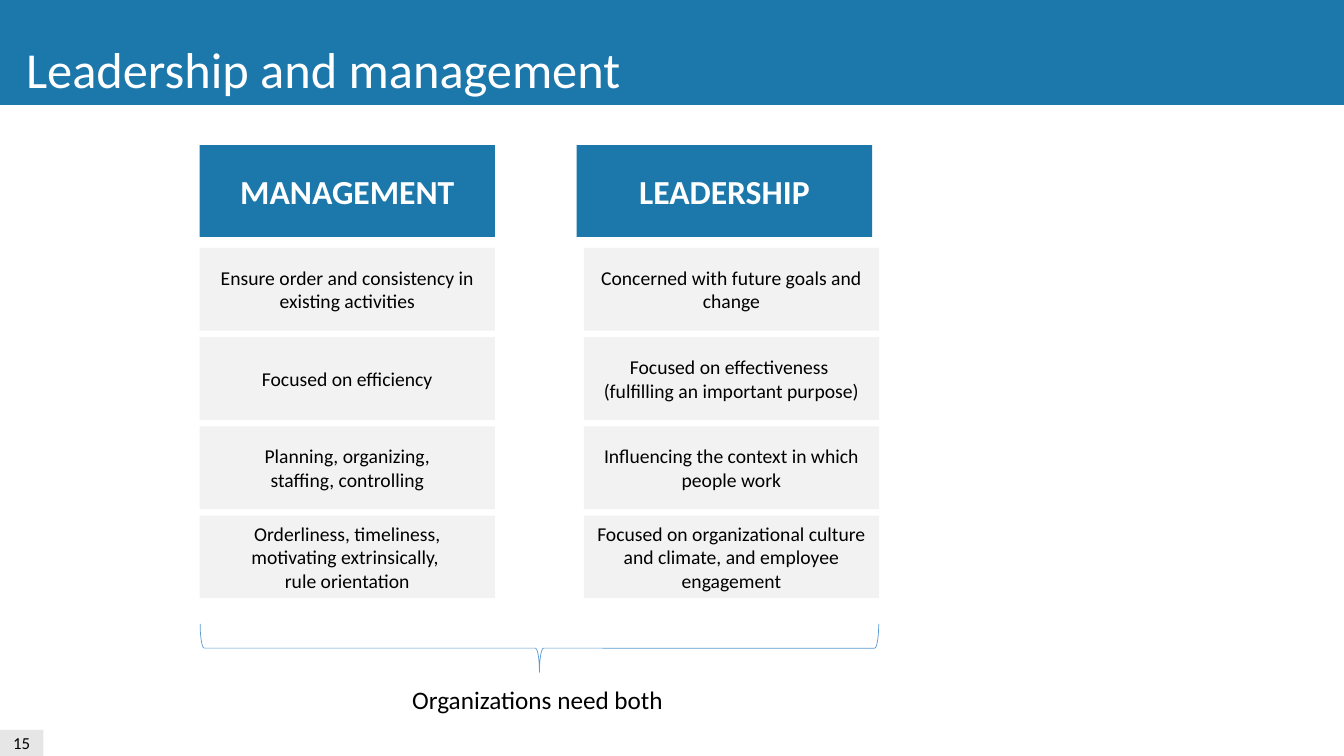
"""Build a slide that compares management with leadership."""
from pptx import Presentation
from pptx.dml.color import RGBColor
from pptx.enum.shapes import MSO_SHAPE
from pptx.enum.text import MSO_ANCHOR, MSO_AUTO_SIZE, PP_ALIGN
from pptx.util import Inches, Pt

THEME = {
    "font": "Calibri",
    "blue": RGBColor.from_string("1C78AB"),
    "brace": RGBColor.from_string("5B9BD5"),
    "panel": RGBColor.from_string("F2F2F2"),
    "footer": RGBColor.from_string("E7E6E6"),
    "white": RGBColor.from_string("FFFFFF"),
    "black": RGBColor.from_string("000000"),
    "title": 36,
    "heading": 24,
    "summary": 18,
    "body": 14,
    "number": 12,
}

COLUMNS = [
    ("MANAGEMENT", 1.98, 1.98, [
        "Ensure order and consistency in existing activities",
        "Focused on efficiency",
        "Planning, organizing,\nstaffing, controlling",
        "Orderliness, timeliness, motivating extrinsically, \vrule orientation",
    ]),
    ("LEADERSHIP", 5.72, 5.79, [
        "Concerned with future goals and change",
        "Focused on effectiveness \v(fulfilling an important purpose)",
        "Influencing the context in which people work",
        "Focused on organizational culture and climate, and employee engagement",
    ]),
]
CARD_WIDTH, CARD_HEIGHT = 2.93, 0.82
HEADING_TOP, HEADING_HEIGHT = 1.44, 0.91
FIRST_ROW, ROW_STEP = 2.46, 0.885
BRACE_CENTER, BRACE_MIDDLE = 5.35, 6.43
BRACE_SPAN, BRACE_DEPTH = 6.73, 0.48

deck = Presentation()
deck.slide_width, deck.slide_height = Inches(13.33), Inches(7.5)
page = deck.slides.add_slide(deck.slide_layouts[6])


def write(box, text, size, color, align, bold=False):
    box.text_frame.text = text
    for para in box.text_frame.paragraphs:
        para.alignment = align
        for span in para.runs:
            span.font.name = THEME["font"]
            span.font.size = Pt(THEME[size])
            span.font.color.rgb = THEME[color]
            span.font.bold = bold


def add_panel(place, fill, text="", size="body", color="black", bold=False):
    box = page.shapes.add_shape(MSO_SHAPE.RECTANGLE, *map(Inches, place))
    box.shadow.inherit = False
    box.fill.solid()
    box.fill.fore_color.rgb = THEME[fill]
    box.line.fill.background()
    box.text_frame.vertical_anchor = MSO_ANCHOR.MIDDLE
    if text:
        write(box, text, size, color, PP_ALIGN.CENTER, bold)


add_panel((0, 7.24, 0.43, 0.26), "footer", "15", "number")
add_panel((0, 0, 13.33, 1.04), "blue")

for heading, heading_left, card_left, statements in COLUMNS:
    add_panel((heading_left, HEADING_TOP, CARD_WIDTH, HEADING_HEIGHT),
              "blue", heading, "heading", "white", True)
    for row, statement in enumerate(statements):
        add_panel((card_left, FIRST_ROW + row * ROW_STEP, CARD_WIDTH, CARD_HEIGHT),
                  "panel", statement)

brace = page.shapes.add_shape(
    MSO_SHAPE.RIGHT_BRACE,
    Inches(BRACE_CENTER - BRACE_DEPTH / 2), Inches(BRACE_MIDDLE - BRACE_SPAN / 2),
    Inches(BRACE_DEPTH), Inches(BRACE_SPAN))
brace.rotation = 90
brace.shadow.inherit = False
brace.fill.background()
brace.line.color.rgb = THEME["brace"]
brace.line.width = Pt(0.5)

for text, place, size, color in [
    ("Leadership and management", (0.16, 0.33, 6.15, 0.71), "title", "white"),
    ("Organizations need both", (3.99, 6.74, 2.72, 0.4), "summary", "black"),
]:
    label = page.shapes.add_textbox(*map(Inches, place))
    label.text_frame.word_wrap = False
    label.text_frame.auto_size = MSO_AUTO_SIZE.SHAPE_TO_FIT_TEXT
    write(label, text, size, color, PP_ALIGN.LEFT)

deck.save("out.pptx")
